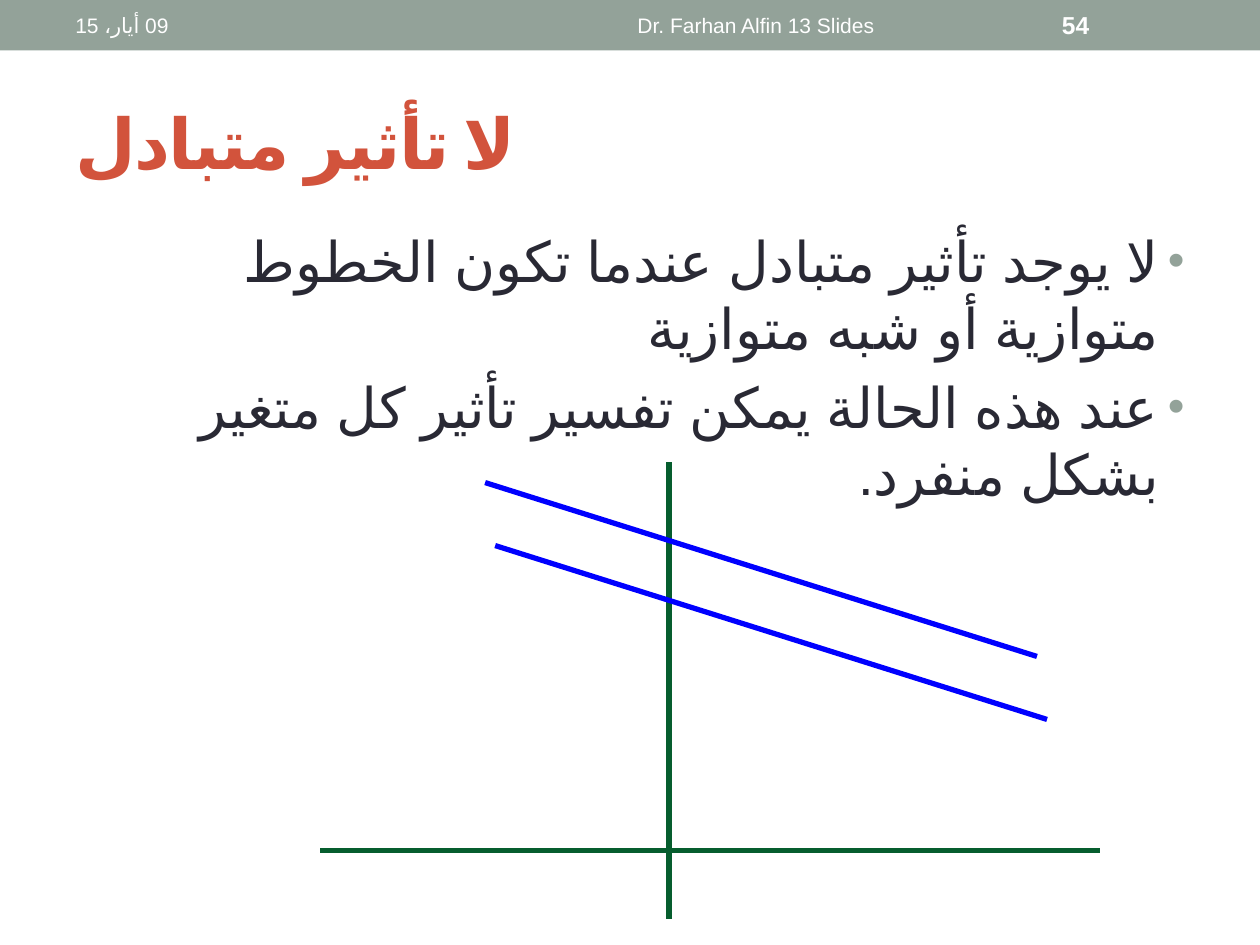
from lxml import etree
from pptx import Presentation
from pptx.dml.color import RGBColor
from pptx.enum import shapes, text
from pptx.oxml import ns
from pptx.util import Inches, Pt

SAGE = RGBColor(0x93, 0xA2, 0x99)
RUST = RGBColor(0xD2, 0x53, 0x3C)
INK = RGBColor(0x29, 0x29, 0x34)
WHITE = RGBColor(0xFF, 0xFF, 0xFF)
GREEN = RGBColor(0x06, 0x5D, 0x2E)
BLUE = RGBColor(0x00, 0x00, 0xFF)
FONT = "Arial"
LANGUAGE = "ar-SY"
LEFT, CENTER, RIGHT = text.PP_ALIGN.LEFT, text.PP_ALIGN.CENTER, text.PP_ALIGN.RIGHT
MIDDLE = text.MSO_ANCHOR.MIDDLE


def add_element(parent, tag, **attributes):
    return etree.SubElement(parent, ns.qn(tag), attributes)


def write(para, words, size, color, align=LEFT, bold=False):
    """Add one Arabic run to a right-to-left paragraph."""
    para.alignment = align
    para._p.get_or_add_pPr().set("rtl", "1")
    span = para.add_run()
    span.text = words
    span.font.name = FONT
    span.font.size = Pt(size)
    span.font.bold = bold
    span.font.color.rgb = color
    settings = span._r.get_or_add_rPr()
    settings.set("lang", LANGUAGE)
    add_element(settings, "a:cs", typeface=FONT)
    return span


def add_text_box(page, left, top, width, height, anchor):
    box = page.shapes.add_textbox(Inches(left), Inches(top), Inches(width), Inches(height))
    box.text_frame.word_wrap = True
    box.text_frame.vertical_anchor = anchor
    return box.text_frame


def add_header(page, left, top, width, height):
    band = page.shapes.add_shape(
        shapes.MSO_SHAPE.RECTANGLE, Inches(left), Inches(top), Inches(width), Inches(height))
    band.shadow.inherit = False
    band.fill.solid()
    band.fill.fore_color.rgb = SAGE
    band.line.fill.background()
    for offset, field_width, words, size, align, bold in (
        (0.5, 3.17, "09 أيار، 15", 12, LEFT, False),
        (3.75, 4.5, "Dr. Farhan Alfin 13 Slides", 12, CENTER, False),
        (8.33, 1.17, "54", 14, LEFT, True),
    ):
        frame = add_text_box(page, left + offset, top + 0.02, field_width, height - 0.04, MIDDLE)
        write(frame.paragraphs[0], words, size, WHITE, align, bold)


def set_title(page, left, top, width, height):
    title = page.shapes.title
    title.left, title.top = Inches(left), Inches(top)
    title.width, title.height = Inches(width), Inches(height)
    title.text_frame.vertical_anchor = MIDDLE
    span = write(title.text_frame.paragraphs[0], "لا تأثير متبادل", 40, RUST, bold=True)
    span._r.get_or_add_rPr().set("spc", "-100")


def add_bullets(page, left, top, width, height, points):
    frame = add_text_box(page, left, top, width, height, text.MSO_ANCHOR.TOP)
    for index, words in enumerate(points):
        para = frame.add_paragraph() if index else frame.paragraphs[0]
        para.space_before = Pt(6.4)
        write(para, words, 32, INK, RIGHT)
        settings = para._p.get_or_add_pPr()
        settings.set("marL", str(Inches(0.2)))
        settings.set("indent", str(Inches(-0.2)))
        add_element(add_element(settings, "a:buClr"), "a:srgbClr", val=str(SAGE))
        add_element(settings, "a:buSzPct", val="85000")
        add_element(settings, "a:buFont", typeface=FONT)
        add_element(settings, "a:buChar", char="•")


def add_line(page, start_x, start_y, end_x, end_y, color):
    line = page.shapes.add_connector(
        shapes.MSO_CONNECTOR.STRAIGHT,
        Inches(start_x), Inches(start_y), Inches(end_x), Inches(end_y))
    line.line.color.rgb = color
    line.line.width = Pt(3)
    add_element(line._element.spPr, "a:effectLst")


def add_parallel_plot(page, left, top, width, height):
    """Draw two crossing axes and two parallel lines above them."""
    axis_x, axis_y = left + 2.77, top + 3.08
    add_line(page, axis_x, top, axis_x, top + height, GREEN)
    add_line(page, left, axis_y, left + width, axis_y, GREEN)
    for step in range(2):
        start_x, start_y = left + 1.31 + 0.08 * step, top + 0.16 + 0.5 * step
        add_line(page, start_x, start_y, start_x + 4.38, start_y + 1.38, BLUE)


def main():
    deck = Presentation()
    deck.slide_width, deck.slide_height = Inches(10), Inches(7.5)
    page = deck.slides.add_slide(deck.slide_layouts[5])
    add_header(page, 0, 0, 10, 0.4)
    set_title(page, 0.5, 0.58, 9, 1.08)
    add_bullets(page, 0.5, 1.75, 9, 5.33, (
        "لا يوجد تأثير متبادل عندما تكون الخطوط متوازية أو شبه متوازية",
        "عند هذه الحالة يمكن تفسير تأثير كل متغير بشكل منفرد.",
    ))
    add_parallel_plot(page, 2.54, 3.67, 6.19, 3.62)
    deck.save("out.pptx")


if __name__ == "__main__":
    main()
